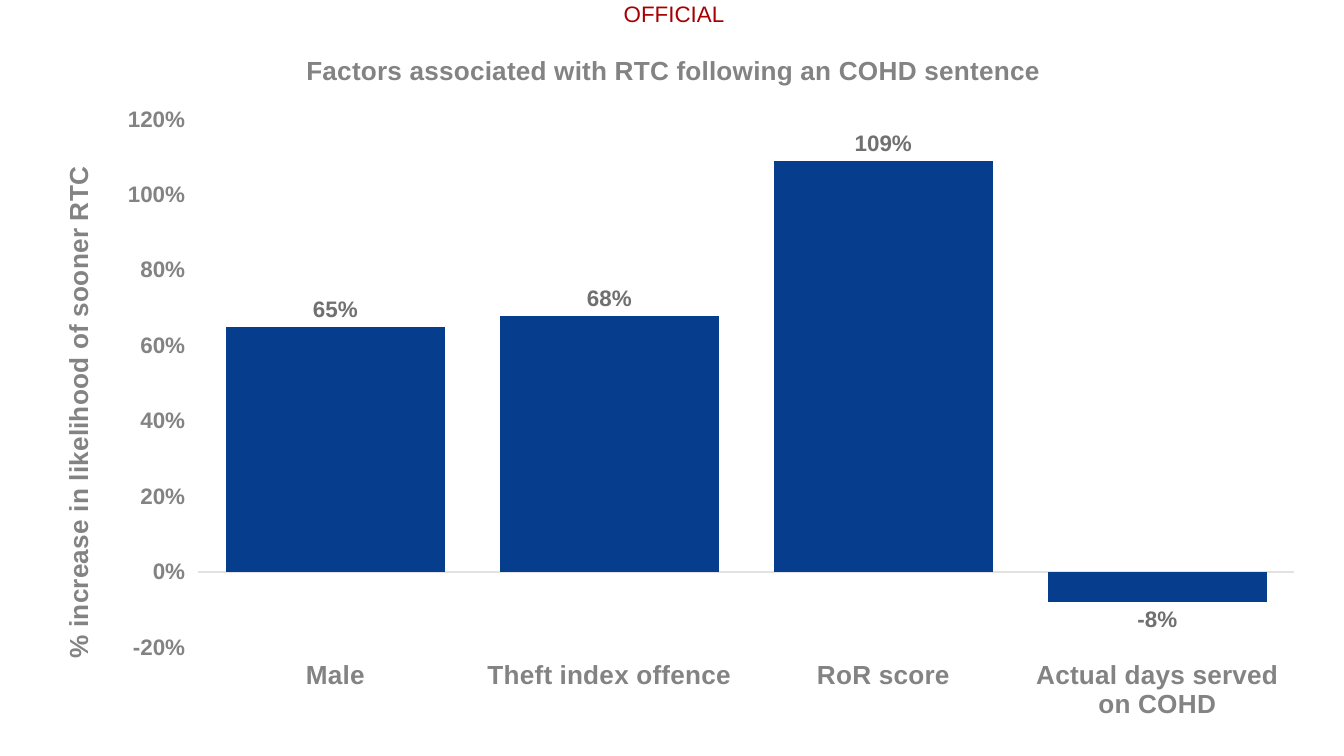
from lxml import etree
from pptx import Presentation
from pptx import util as u
from pptx.chart.data import CategoryChartData
from pptx.dml.color import RGBColor
from pptx.enum import chart as ch, text
from pptx.oxml.ns import qn

PX = u.Inches(1) // 96
FONT = "Arial"
RED = RGBColor(0xA8, 0x00, 0x00)
BLUE = RGBColor(0x06, 0x3E, 0x8D)
GREY = RGBColor(0x83, 0x83, 0x83)
LABEL_GREY = RGBColor(0x70, 0x70, 0x70)
LINE_GREY = RGBColor(0xE2, 0xE2, 0xE2)
FACTORS = {
    "Male": 0.65,
    "Theft index offence": 0.68,
    "RoR score": 1.09,
    "Actual days served on COHD": -0.08,
}


def set_font(font, size, color, bold=True):
    font.name = FONT
    font.size = u.Pt(size)
    font.bold = bold
    font.color.rgb = color


def set_layout(parent, before, **places):
    for old in parent.findall(qn("c:layout")):
        parent.remove(old)
    layout = etree.Element(qn("c:layout"))
    manual = etree.SubElement(layout, qn("c:manualLayout"))
    for name, value in places.items():
        etree.SubElement(manual, qn("c:" + name)).set("val", str(value))
    parent.find(qn("c:" + before)).addprevious(layout)


def add_title(owner, words, x, y):
    owner.has_title = True
    title = owner.chart_title if hasattr(owner, "chart_title") else owner.axis_title
    r = title.text_frame.paragraphs[0].add_run()
    r.text = words
    set_font(r.font, 14, GREY)
    el = title._element
    if el.find(qn("c:overlay")) is None:
        el.find(qn("c:tx")).addnext(etree.Element(qn("c:overlay"), val="0"))
    set_layout(el, "overlay", xMode="edge", yMode="edge", x=x, y=y)
    return title


def add_marking(s, x, y, w, h):
    sp = s.shapes.add_textbox(x * PX, y * PX, w * PX, h * PX)
    tf = sp.text_frame
    tf.margin_left = tf.margin_right = tf.margin_top = tf.margin_bottom = 0
    tf.word_wrap = True
    p = tf.paragraphs[0]
    p.alignment = text.PP_ALIGN.CENTER
    r = p.add_run()
    r.text = "OFFICIAL"
    set_font(r.font, 12, RED, False)


def style_axis(axis, size):
    axis.has_major_gridlines = False
    axis.major_tick_mark = axis.minor_tick_mark = ch.XL_TICK_MARK.NONE
    axis.tick_label_position = ch.XL_TICK_LABEL_POSITION.LOW
    set_font(axis.tick_labels.font, size, GREY)


def add_factors_chart(s, x, y, w, h):
    data = CategoryChartData(number_format="0%")
    data.categories = list(FACTORS)
    data.add_series("Series 1", list(FACTORS.values()))
    chart = s.shapes.add_chart(ch.XL_CHART_TYPE.COLUMN_CLUSTERED,
                               x * PX, y * PX, w * PX, h * PX, data).chart
    chart.has_legend = False
    chart.font.name = FONT
    chart.font.size = u.Pt(10)
    add_title(chart, "Factors associated with RTC following an COHD sentence", 0.21, 0.03)

    cat, val = chart.category_axis, chart.value_axis
    style_axis(cat, 14)
    cat.format.line.color.rgb = LINE_GREY
    cat.format.line.width = u.Pt(0.75)
    style_axis(val, 12)
    val.format.line.fill.background()
    val.minimum_scale, val.maximum_scale, val.major_unit = -0.2, 1.2, 0.2
    val.tick_labels.number_format = "0%"
    val.tick_labels.number_format_is_linked = False
    title = add_title(val, "% increase in likelihood of sooner RTC", 0.02, 0.19)
    body = title.text_frame._txBody.find(qn("a:bodyPr"))
    body.set("rot", "-5400000")
    body.set("vert", "horz")

    plot = chart.plots[0]
    plot.gap_width = 25
    plot.overlap = -27
    plot.vary_by_categories = False
    bars = plot.series[0]
    bars.invert_if_negative = False
    bars.format.fill.solid()
    bars.format.fill.fore_color.rgb = BLUE
    labels = bars.data_labels
    labels.show_value = True
    labels.position = ch.XL_LABEL_POSITION.OUTSIDE_END
    labels.number_format = "0%"
    labels.number_format_is_linked = False
    set_font(labels.font, 12, LABEL_GREY)
    area = chart._chartSpace.find(".//" + qn("c:plotArea"))
    set_layout(area, "barChart", layoutTarget="inner", xMode="edge", yMode="edge",
               x=0.13, y=0.13, w=0.85, h=0.75)


def main():
    prs = Presentation()
    prs.slide_width, prs.slide_height = 960 * PX, 540 * PX
    s = prs.slides.add_slide(prs.slide_layouts[6])
    add_marking(s, 443, 0, 77, 19)
    add_factors_chart(s, 22, 20, 921, 503)
    prs.save("out.pptx")


if __name__ == "__main__":
    main()
